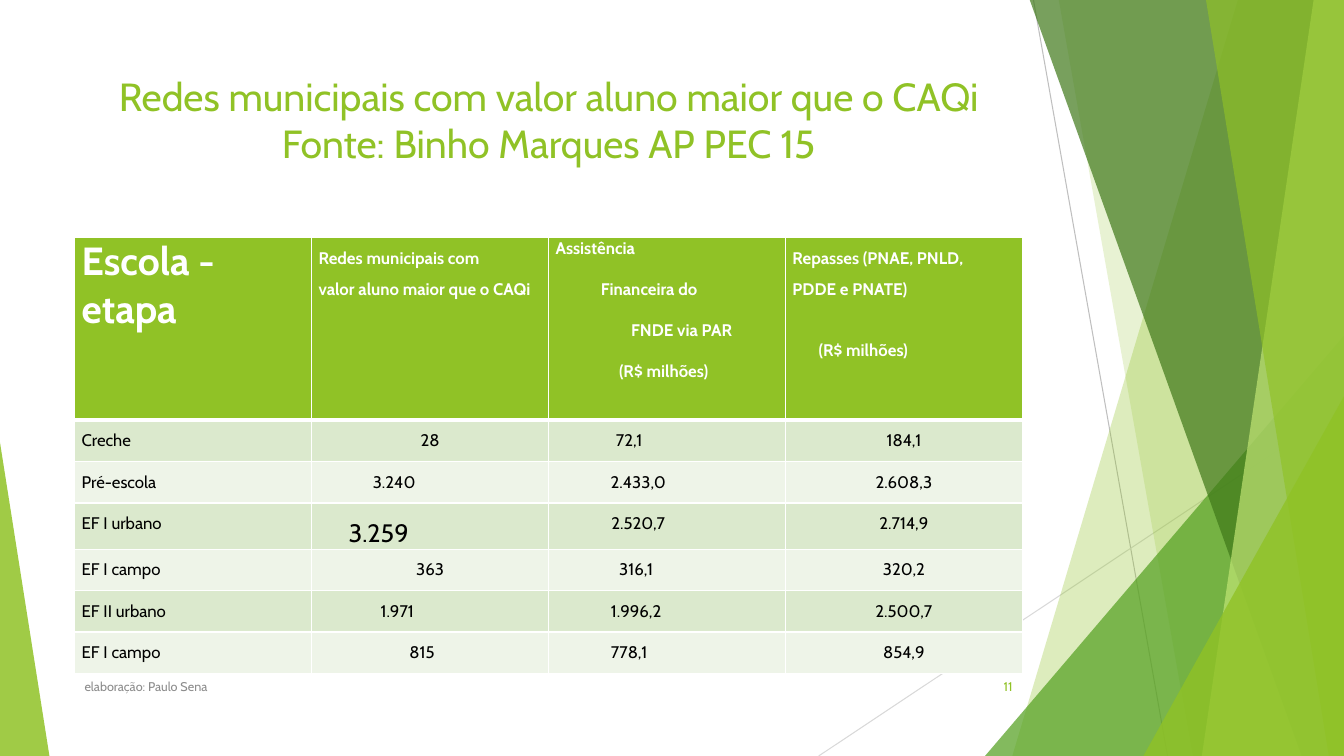
from dataclasses import dataclass

from lxml import etree
from pptx import Presentation
from pptx.dml.color import RGBColor
from pptx.enum.shapes import MSO_CONNECTOR, MSO_SHAPE
from pptx.enum.text import MSO_ANCHOR, PP_ALIGN
from pptx.oxml.ns import qn
from pptx.util import Emu, Pt

TRIANGLE = MSO_SHAPE.ISOSCELES_TRIANGLE
STRAIGHT = MSO_CONNECTOR.STRAIGHT
TOP, MIDDLE = MSO_ANCHOR.TOP, MSO_ANCHOR.MIDDLE
LEFT, CENTER = PP_ALIGN.LEFT, PP_ALIGN.CENTER
RIGHT, JUSTIFY = PP_ALIGN.RIGHT, PP_ALIGN.JUSTIFY

PX = 9144
FONT = "Cabin"
WHITE = RGBColor(0xFF, 0xFF, 0xFF)
BLACK = RGBColor(0x00, 0x00, 0x00)
GRAY = RGBColor(0x8C, 0x8C, 0x8C)
LINE_DARK = RGBColor(0xBF, 0xBF, 0xBF)
LINE_LIGHT = RGBColor(0xD9, 0xD9, 0xD9)
LIME = RGBColor(0x90, 0xC2, 0x26)
GREEN = RGBColor(0x54, 0xA0, 0x21)
FOREST = RGBColor(0x3F, 0x78, 0x19)
PALE_LIME = RGBColor(0xC0, 0xE4, 0x74)
BAND_DARK = RGBColor(0xDB, 0xE9, 0xCD)
BAND_LIGHT = RGBColor(0xEE, 0xF4, 0xE8)

COL_W, HEADER_H, ROW_H, TALL_ROW_H = 235, 181, 41, 46
CELL_INSET = 7


@dataclass(frozen=True)
class Line:
    start: tuple[int, int]
    end: tuple[int, int]
    color: RGBColor


@dataclass(frozen=True)
class Band:
    points: tuple[tuple[int, int], ...]
    color: RGBColor
    alpha: int


@dataclass(frozen=True)
class Triangle:
    box: tuple[int, int, int, int]
    apex: int
    color: RGBColor
    alpha: int


@dataclass(frozen=True)
class Label:
    text: str
    box: tuple[int, int, int, int]
    size: int
    color: RGBColor
    align: PP_ALIGN
    anchor: MSO_ANCHOR


@dataclass(frozen=True)
class Para:
    text: str
    align: PP_ALIGN = JUSTIFY
    spacing: float = 1.5
    size: int = 12
    indent: int = 0
    before: float = 0


@dataclass(frozen=True)
class Value:
    text: str
    pad: int = 0
    size: int = 12


LINES = (
    Line((1025, 0), (1158, 750), LINE_DARK),
    Line((1333, 403), (812, 750), LINE_LIGHT),
)


def band(top: int, bottom: int, color: RGBColor, alpha: int) -> Band:
    """Describe a band from a slanted left side to the right slide edge."""
    return Band(((top, -1), (1333, -1), (1333, 750), (bottom, 750)), color, alpha)


FACETS = (
    band(1228, 1004, LIME, 30),
    band(1050, 1183, LIME, 20),
    Triangle((977, 333, 356, 417), 1, GREEN, 72),
    band(1021, 1291, FOREST, 70),
    band(1303, 1192, PALE_LIME, 70),
    band(1196, 1318, LIME, 65),
    Triangle((1134, 393, 199, 357), 1, LIME, 80),
    Triangle((0, 439, 49, 311), 0, LIME, 85),
)

LABELS = (
    Label("Redes municipais com valor aluno maior que o CAQi Fonte: Binho Marques AP PEC 15",
          (74, 67, 940, 144), 28, LIME, CENTER, TOP),
    Label("elaboração: Paulo Sena", (74, 661, 689, 40), 9, GRAY, LEFT, MIDDLE),
    Label("11", (939, 661, 75, 40), 9, LIME, RIGHT, MIDDLE),
)

HEADERS = (
    (Para("Escola - etapa", LEFT, 1, 28),),
    (Para("Redes municipais com"), Para("valor aluno maior que o CAQi")),
    (Para("Assistência", JUSTIFY, 1),
     Para("Financeira do", LEFT, 1, indent=45, before=14.6),
     Para("FNDE via PAR", LEFT, 1, indent=75, before=14.6),
     Para("(R$ milhões)", LEFT, 1, indent=63, before=14.6)),
    (Para("Repasses (PNAE, PNLD,"), Para("PDDE e PNATE)"),
     Para("(R$ milhões)", indent=26, before=21.9)),
)

ROWS = (
    ("Creche", Value("28"), Value("72,1", 75), Value("184,1")),
    ("Pré-escola", Value("3.240", 71), Value("2.433,0", 57), Value("2.608,3")),
    ("EF I urbano", Value("3.259", 102, 18), Value("2.520,7", 57), Value("2.714,9")),
    ("EF I campo", Value("363"), Value("316,1", 61), Value("320,2")),
    ("EF II urbano", Value("1.971", 65), Value("1.996,2", 61), Value("2.500,7")),
    ("EF I campo", Value("815", 16), Value("778,1", 75), Value("854,9")),
)


def px(*values: int) -> list[Emu]:
    """Turn px lengths into EMU."""
    return [Emu(v * PX) for v in values]


def style_run(r, size: int, color: RGBColor, bold: bool = False) -> None:
    """Apply the font to a run."""
    for name, value in {"name": FONT, "size": Pt(size), "bold": bold}.items():
        setattr(r.font, name, value)
    r.font.color.rgb = color


def draw_line(slide, line: Line) -> None:
    """Draw a thin straight line."""
    c = slide.shapes.add_connector(STRAIGHT, *px(*line.start, *line.end))
    c.line.color.rgb = line.color
    c.line.width = Pt(0.75)
    etree.SubElement(c._element.spPr, qn("a:effectLst"))


def draw_facet(slide, facet: Band | Triangle) -> None:
    """Draw a translucent band or triangle."""
    if isinstance(facet, Band):
        builder = slide.shapes.build_freeform(*facet.points[0], scale=PX)
        builder.add_line_segments(facet.points[1:], close=True)
        sp = builder.convert_to_shape()
    else:
        sp = slide.shapes.add_shape(TRIANGLE, *px(*facet.box))
        sp.adjustments[0] = facet.apex
    sp.shadow.inherit = False
    sp.line.fill.background()
    sp.fill.solid()
    sp.fill.fore_color.rgb = facet.color
    color = sp._element.spPr.find(qn("a:solidFill"))[0]
    etree.SubElement(color, qn("a:alpha"), val=str(facet.alpha * 1000))


def draw_label(slide, label: Label) -> None:
    """Draw a text box with one paragraph."""
    tf = slide.shapes.add_textbox(*px(*label.box)).text_frame
    tf.word_wrap = True
    tf.vertical_anchor = label.anchor
    p = tf.paragraphs[0]
    p.alignment = label.align
    r = p.add_run()
    r.text = label.text
    style_run(r, label.size, label.color)


def fill_cell(cell, paras: tuple[Para, ...], fill: RGBColor, pad: int = 0,
              header: bool = False, below_header: bool = False) -> None:
    """Write, fill and border one table cell."""
    left, right = px(CELL_INSET, CELL_INSET + pad)
    margins = {"margin_left": left, "margin_right": right, "margin_top": 0, "margin_bottom": 0}
    for name, value in margins.items():
        setattr(cell, name, value)
    tf = cell.text_frame
    for i, para in enumerate(paras):
        p = tf.add_paragraph() if i else tf.paragraphs[0]
        formats = {"alignment": para.align, "line_spacing": para.spacing,
                   "space_before": Pt(para.before)}
        for name, value in formats.items():
            setattr(p, name, value)
        p._p.get_or_add_pPr().set("marL", str(para.indent * PX))
        r = p.add_run()
        r.text = para.text
        style_run(r, para.size, WHITE if header else BLACK, header)
    tc_pr = cell._tc.get_or_add_tcPr()
    widths = {"lnL": 1, "lnR": 1, "lnT": 3 if below_header else 1, "lnB": 3 if header else 1}
    for side, width in widths.items():
        ln = etree.SubElement(tc_pr, qn(f"a:{side}"), w=str(Pt(width)))
        etree.SubElement(etree.SubElement(ln, qn("a:solidFill")), qn("a:srgbClr"), val=str(WHITE))
    cell.fill.solid()
    cell.fill.fore_color.rgb = fill


def draw_table(slide) -> None:
    """Draw the table of municipal networks."""
    heights = [HEADER_H] + [TALL_ROW_H if row[1].size > 12 else ROW_H for row in ROWS]
    box = px(74, 236, COL_W * len(HEADERS), sum(heights))
    table = slide.shapes.add_table(len(heights), len(HEADERS), *box).table
    for row, height in zip(table.rows, px(*heights)):
        row.height = height
    for col, paras in enumerate(HEADERS):
        fill_cell(table.cell(0, col), paras, LIME, header=True)
    for i, (stage, *values) in enumerate(ROWS, 1):
        fill = BAND_DARK if i % 2 else BAND_LIGHT
        fill_cell(table.cell(i, 0), (Para(stage),), fill, below_header=i == 1)
        for col, v in enumerate(values, 1):
            para = Para(v.text, CENTER, size=v.size)
            fill_cell(table.cell(i, col), (para,), fill, v.pad, below_header=i == 1)


def main() -> None:
    """Build and save the slide."""
    prs = Presentation()
    prs.slide_width, prs.slide_height = px(1333, 750)
    s = prs.slides.add_slide(prs.slide_layouts[6])
    for line in LINES:
        draw_line(s, line)
    for facet in FACETS:
        draw_facet(s, facet)
    draw_table(s)
    for label in LABELS:
        draw_label(s, label)
    prs.save("out.pptx")


if __name__ == "__main__":
    main()
